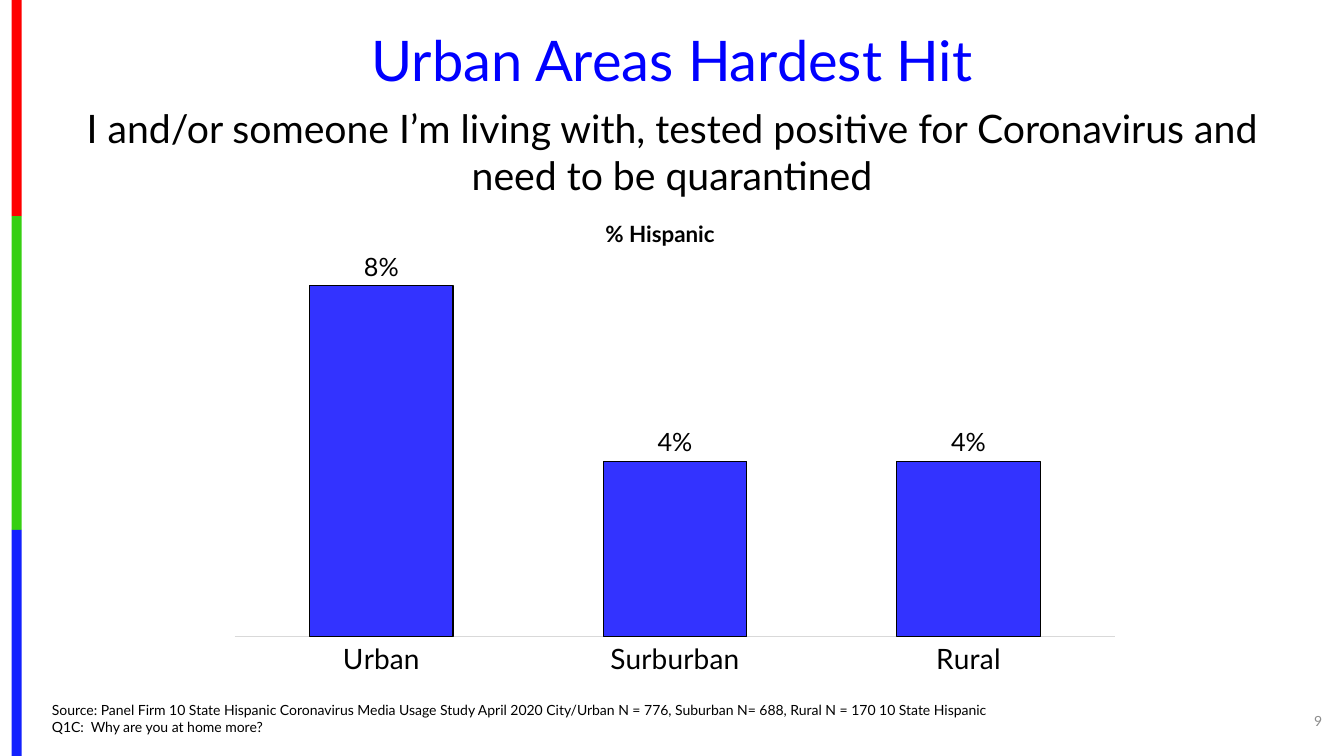
"""Build the slide on urban, suburban and rural Coronavirus quarantine rates."""
import dataclasses

import pptx
import pptx.chart.data
import pptx.dml.color
import pptx.enum.chart
import pptx.enum.text
import pptx.oxml
import pptx.oxml.ns
import pptx.util

Pt = pptx.util.Pt
ALIGN = pptx.enum.text.PP_ALIGN
ANCHOR = pptx.enum.text.MSO_ANCHOR


@dataclasses.dataclass(frozen=True)
class Theme:
    font: str = "Lato"
    title: str = "0000FF"
    text: str = "000000"
    muted: str = "8C8C8C"
    bar: str = "3333FF"
    axis: str = "D9D9D9"
    stripes: tuple = ("FE0000", "36CF12", "1322FE")
    title_size: int = 40
    subtitle_size: int = 28
    category_size: int = 20
    value_size: int = 18
    caption_size: int = 16
    small_size: int = 10


def color(code):
    return pptx.dml.color.RGBColor.from_string(code)


def assign(target, values):
    for name, value in values.items():
        setattr(target, name, value)


class SlideBuilder:
    def __init__(self, slide, theme):
        self.slide = slide
        self.theme = theme

    def style_font(self, font, size, code=None, bold=False):
        assign(font, {"name": self.theme.font, "size": Pt(size), "bold": bold})
        font.color.rgb = color(code or self.theme.text)

    def fill_text(self, shape, wording, size, code=None, bold=False,
                  align=ALIGN.LEFT, anchor=ANCHOR.TOP, spacing=1.0):
        frame = shape.text_frame
        frame.text = wording
        assign(frame, {"word_wrap": True, "vertical_anchor": anchor,
                       "auto_size": pptx.enum.text.MSO_AUTO_SIZE.NONE})
        paragraph = frame.paragraphs[0]
        assign(paragraph, {"alignment": align, "line_spacing": spacing})
        for run in paragraph.runs:
            self.style_font(run.font, size, code, bold)

    def title(self, box, wording):
        heading = self.slide.shapes.title
        assign(heading, dict(zip(("left", "top", "width", "height"), map(Pt, box))))
        self.fill_text(heading, wording, self.theme.title_size, self.theme.title,
                       align=ALIGN.CENTER, anchor=ANCHOR.MIDDLE, spacing=0.9)

    def text(self, box, wording, size, **style):
        self.fill_text(self.slide.shapes.add_textbox(*map(Pt, box)), wording, size, **style)

    def stripes(self, left, width, heights):
        top = 0
        for height, code in zip(heights, self.theme.stripes):
            stripe = self.slide.shapes.add_shape(
                pptx.enum.shapes.MSO_SHAPE.RECTANGLE, *map(Pt, (left, top, width, height)))
            stripe.shadow.inherit = False
            stripe.fill.solid()
            stripe.fill.fore_color.rgb = color(code)
            stripe.line.fill.background()
            top += height

    def column_chart(self, box, categories, shares, plot_area):
        kinds = pptx.enum.chart
        data = pptx.chart.data.CategoryChartData(number_format="0%")
        data.categories = categories
        data.add_series("Series 1", shares)
        chart = self.slide.shapes.add_chart(
            kinds.XL_CHART_TYPE.COLUMN_CLUSTERED, *map(Pt, box), data).chart
        assign(chart, {"has_legend": False, "has_title": False})
        self.style_font(chart.font, self.theme.small_size)

        columns = chart.plots[0]
        assign(columns, {"gap_width": 105, "overlap": -11,
                         "vary_by_categories": False, "has_data_labels": True})
        assign(columns.data_labels, {
            "show_value": True, "number_format": "0%", "number_format_is_linked": False,
            "position": kinds.XL_LABEL_POSITION.OUTSIDE_END})
        self.style_font(columns.data_labels.font, self.theme.value_size)

        bars = columns.series[0].format
        bars.fill.solid()
        bars.fill.fore_color.rgb = color(self.theme.bar)
        category_axis = chart.category_axis
        category_axis.major_tick_mark = kinds.XL_TICK_MARK.NONE
        self.style_font(category_axis.tick_labels.font, self.theme.category_size)
        for line, code in ((bars.line, self.theme.text),
                           (category_axis.format.line, self.theme.axis)):
            line.color.rgb = color(code)
            line.width = Pt(0.75)
        assign(chart.value_axis, {"visible": False, "has_major_gridlines": False,
                                  "minimum_scale": 0, "maximum_scale": 0.09})
        self.place_plot(chart, plot_area)

    def place_plot(self, chart, plot_area):
        qn = pptx.oxml.ns.qn
        area = chart.element.find(".//" + qn("c:plotArea"))
        for automatic in area.findall(qn("c:layout")):
            area.remove(automatic)
        settings = [("layoutTarget", "inner"), ("xMode", "edge"), ("yMode", "edge")]
        settings += zip("xywh", plot_area)
        content = "".join(f'<c:{tag} val="{value}"/>' for tag, value in settings)
        area.insert(0, pptx.oxml.parse_xml(
            f'<c:layout {pptx.oxml.ns.nsdecls("c")}>'
            f"<c:manualLayout>{content}</c:manualLayout></c:layout>"))


def main():
    deck = pptx.Presentation()
    assign(deck, {"slide_width": Pt(960), "slide_height": Pt(540)})
    theme = Theme()
    page = SlideBuilder(deck.slides.add_slide(deck.slide_layouts[5]), theme)

    page.stripes(8.4, 7.2, (154.5, 224, 161.5))
    page.title((30, 20, 900, 51), "Urban Areas Hardest Hit")
    page.text((42, 71, 876, 75),
              "I and/or someone I’m living with, tested positive for Coronavirus "
              "and need to be quarantined",
              theme.subtitle_size, align=ALIGN.CENTER)
    page.column_chart((145.5, 166.5, 651.5, 328.5), ("Urban", "Surburban", "Rural"),
                      (0.08, 0.04, 0.04), (0.034, 0.018, 0.966, 0.86))
    page.text((30, 494, 767, 35),
              "Source: Panel Firm 10 State Hispanic Coronavirus Media Usage Study April 2020 "
              "City/Urban N = 776, Suburban N= 688, Rural N = 170 10 State Hispanic \v"
              "Q1C:  Why are you at home more?",
              theme.small_size, anchor=ANCHOR.BOTTOM)
    page.text((908.5, 500.5, 43, 29), "9", theme.small_size, code=theme.muted,
              align=ALIGN.RIGHT, anchor=ANCHOR.MIDDLE)
    page.text((343, 153.5, 257, 27), "% Hispanic", theme.caption_size, bold=True,
              align=ALIGN.CENTER)
    deck.save("out.pptx")


if __name__ == "__main__":
    main()
